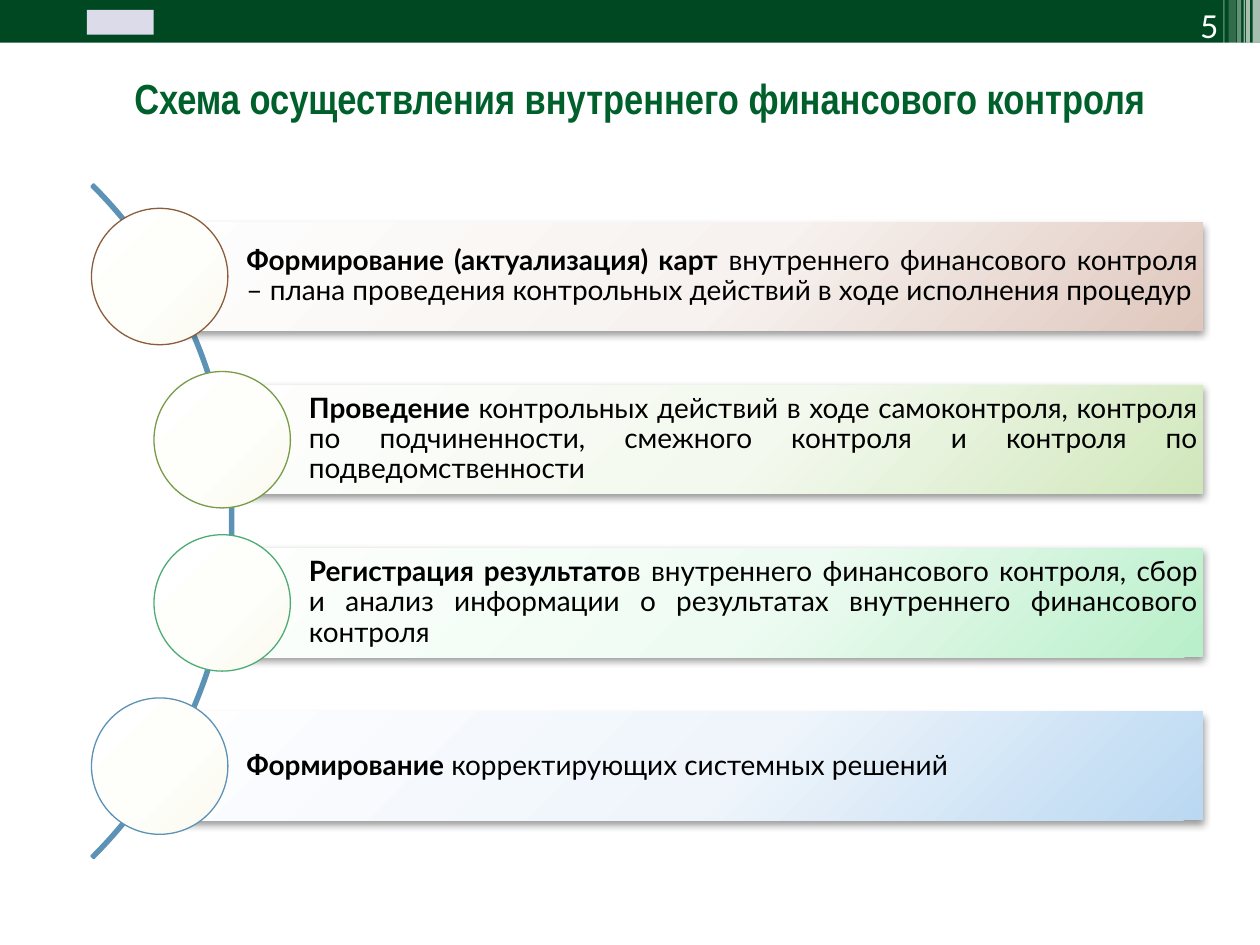
import pptx
import pptx.util
from dataclasses import dataclass
from lxml import etree
from pptx.dml.color import RGBColor
from pptx.enum.shapes import MSO_SHAPE
from pptx.enum.text import MSO_ANCHOR, PP_ALIGN
from pptx.oxml import parse_xml
from pptx.oxml.ns import nsdecls, qn
from pptx.util import Cm, Pt


@dataclass(frozen=True)
class Theme:
    band: str = "004821"
    title: str = "00602B"
    white: str = "FFFFFF"
    black: str = "000000"
    emblem: str = "DBDBE9"
    arc: str = "5C92B5"
    disc: tuple = ("FFFFFF", "FEFEFB", "FAFAF0")
    title_font: str = "Arial Narrow"
    body_font: str = "Lato"
    title_size: int = 24
    number_size: int = 18
    body_size: int = 16


T = Theme()


def add_run(p, text, size, color, font, bold=False):
    r = p.add_run()
    r.text = text
    r.font.size = Pt(size)
    r.font.name = font
    r.font.bold = bold
    r.font.color.rgb = RGBColor.from_string(color)


def set_radial_fill(sp, colors):
    """Fill with three stops spreading from beyond the top left corner."""
    stops = "".join(
        f'<a:gs pos="{pos}"><a:srgbClr val="{color}"/></a:gs>'
        for pos, color in zip((0, 55000, 100000), colors)
    )
    grad = parse_xml(
        f'<a:gradFill {nsdecls("a")} rotWithShape="1"><a:gsLst>{stops}</a:gsLst>'
        '<a:path path="circle"><a:fillToRect l="-40000" t="-90000" r="140000" b="190000"/>'
        "</a:path></a:gradFill>"
    )
    sp.fill.background()
    no_fill = sp._element.spPr.find(qn("a:noFill"))
    no_fill.getparent().replace(no_fill, grad)


prs = pptx.Presentation()
prs.slide_width, prs.slide_height = Cm(25.4), Cm(19.05)
s = prs.slides.add_slide(prs.slide_layouts[6])

# Header band, its translucent stripes and a plain emblem: left, top, width, height, colour, opacity %
header = [
    (0, 0, 25.4, 0.86, T.band, 100),
    (25.25, 0, 0.15, 0.86, T.white, 65),
    (25.12, 0, 0.08, 0.86, T.white, 65),
    (25.07, 0, 0.03, 0.86, T.white, 60),
    (24.94, 0, 0.08, 0.86, T.white, 40),
    (24.77, 0, 0.15, 0.91, T.white, 20),
    (24.66, 0, 0.03, 0.91, T.white, 30),
    (1.75, 0.2, 1.35, 0.5, T.emblem, 100),
]
for left, top, width, height, color, opacity in header:
    sp = s.shapes.add_shape(MSO_SHAPE.RECTANGLE, Cm(left), Cm(top), Cm(width), Cm(height))
    sp.shadow.inherit = False
    sp.fill.solid()
    sp.fill.fore_color.rgb = RGBColor.from_string(color)
    sp.line.fill.background()
    if opacity < 100:
        clr = sp._element.spPr.find(".//" + qn("a:srgbClr"))
        etree.SubElement(clr, qn("a:alpha")).set("val", str(opacity * 1000))

# Slide number and title
labels = [
    ((22.7, 0, 2.11, 1.02), "5", PP_ALIGN.RIGHT, MSO_ANCHOR.BOTTOM,
     T.number_size, T.white, T.body_font, False),
    ((0.4, 1.17, 25, 1.62), "Схема осуществления внутреннего финансового контроля",
     PP_ALIGN.CENTER, MSO_ANCHOR.MIDDLE, T.title_size, T.title, T.title_font, True),
]
for box, text, align, anchor, *style in labels:
    tf = s.shapes.add_textbox(*map(Cm, box)).text_frame
    tf.word_wrap = True
    tf.vertical_anchor = anchor
    p = tf.paragraphs[0]
    p.alignment = align
    add_run(p, text, *style)

# Arc that carries the steps
arc = s.shapes.add_shape(MSO_SHAPE.BLOCK_ARC, Cm(-14.5), Cm(0.91), Cm(19.2), Cm(19.2))
arc.adjustments[0], arc.adjustments[1], arc.adjustments[2] = 189, 27, 0.003
arc.shadow.inherit = False
arc.fill.background()
arc.line.color.rgb = RGBColor.from_string(T.arc)
arc.line.width = Pt(1.5)

# Steps: bar left, bar gradient, disc outline, bold text, plain text
steps = [
    (3.22, ("FEFEFE", "F7F2EF", "DFC7BD"), "8B5D3D", "Формирование (актуализация) карт",
     " внутреннего финансового контроля – плана проведения контрольных действий"
     " в ходе исполнения процедур"),
    (4.48, ("FEFEFE", "F4F9EF", "D0E7BB"), "789B45", "Проведение",
     " контрольных действий в ходе самоконтроля, контроля по подчиненности,"
     " смежного контроля и контроля по подведомственности"),
    (4.48, ("FEFFFE", "EEFBF2", "B9EFC9"), "4DAC73", "Регистрация результато",
     "в внутреннего финансового контроля, сбор и анализ информации"
     " о результатах внутреннего финансового контроля"),
    (3.22, ("FEFEFF", "EFF5FB", "BAD8F2"), "5C92B5", "Формирование",
     " корректирующих системных решений"),
]
FIRST_TOP, PITCH, BAR_HEIGHT, BAR_RIGHT, DISC = 4.48, 3.29, 2.19, 24.25, 2.75

for i, (left, gradient, outline, bold, plain) in enumerate(steps):
    top = FIRST_TOP + i * PITCH
    bar = s.shapes.add_shape(MSO_SHAPE.RECTANGLE, Cm(left), Cm(top),
                             Cm(BAR_RIGHT - left), Cm(BAR_HEIGHT))
    set_radial_fill(bar, gradient)
    bar.line.fill.background()
    bar.shadow.inherit = False
    effects = bar._element.spPr.find(qn("a:effectLst"))
    effects.append(parse_xml(
        f'<a:outerShdw {nsdecls("a")} blurRad="{Pt(4.1)}" dist="{Pt(2)}" dir="5400000"'
        f' rotWithShape="0"><a:srgbClr val="{T.black}"><a:alpha val="40000"/></a:srgbClr>'
        "</a:outerShdw>"
    ))
    tf = bar.text_frame
    tf.word_wrap = True
    tf.vertical_anchor = MSO_ANCHOR.MIDDLE
    tf.margin_left = Cm(1.75)
    tf.margin_top = tf.margin_right = tf.margin_bottom = Cm(0.1)
    p = tf.paragraphs[0]
    p.alignment = PP_ALIGN.JUSTIFY
    p.line_spacing = 0.9
    add_run(p, bold, T.body_size, T.black, T.body_font, True)
    add_run(p, plain, T.body_size, T.black, T.body_font)

    disc = s.shapes.add_shape(MSO_SHAPE.OVAL, Cm(left - DISC / 2),
                              Cm(top + (BAR_HEIGHT - DISC) / 2), Cm(DISC), Cm(DISC))
    set_radial_fill(disc, T.disc)
    disc.shadow.inherit = False
    disc.line.color.rgb = RGBColor.from_string(outline)
    disc.line.width = Pt(0.75)

prs.save("out.pptx")
